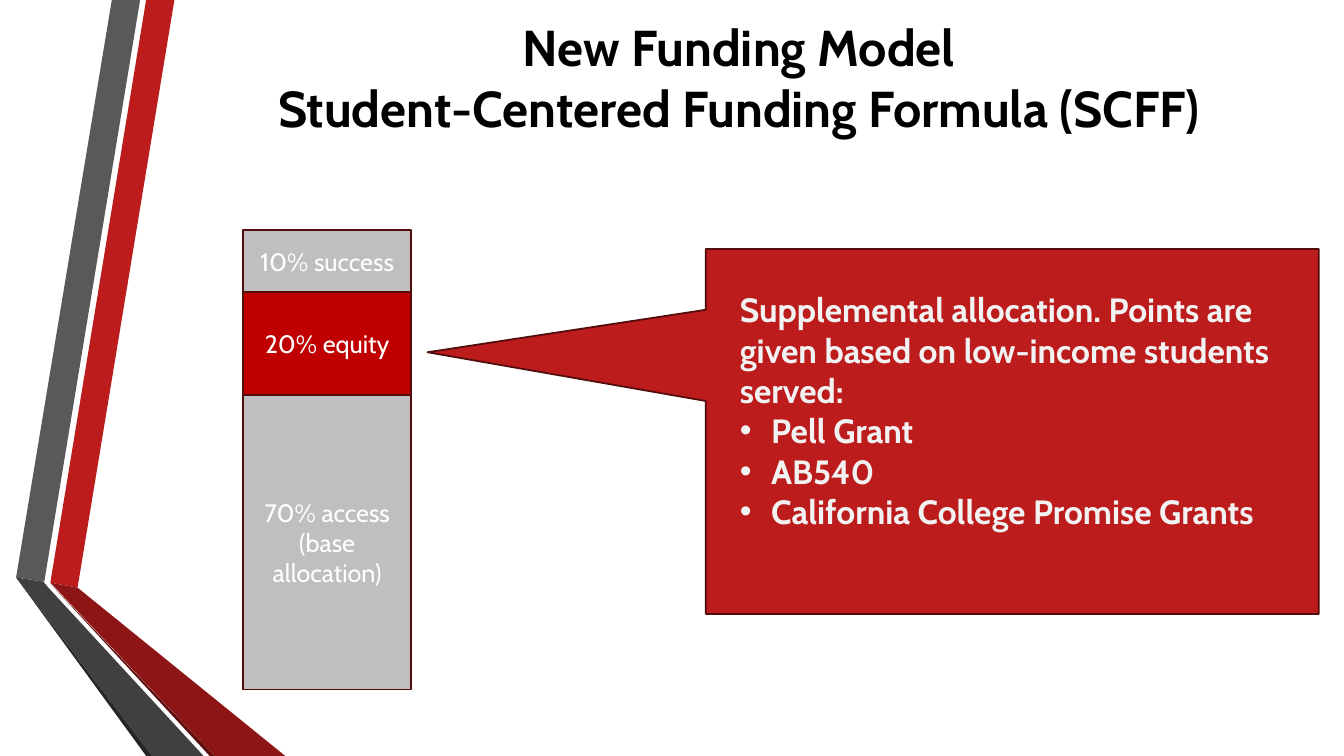
"""Builds the Student-Centered Funding Formula slide."""
import pptx
import pptx.dml.color
import pptx.enum.shapes
import pptx.enum.text
import pptx.oxml
import pptx.oxml.ns
import pptx.util

Inches = pptx.util.Inches
Pt = pptx.util.Pt
SHAPE = pptx.enum.shapes.MSO_SHAPE
ALIGN = pptx.enum.text.PP_ALIGN
ANCHOR = pptx.enum.text.MSO_ANCHOR

FONT = "Cabin"
RED, EDGE, GREY = "BC1C1C", "520C0C", "BFBFBF"

TITLE = ["New Funding Model", "Student-Centered Funding Formula (SCFF)"]
BANDS = [
    ("10% success", 0.62, GREY),
    ("20% equity", 1.02, "C00000"),
    ("70% access (base allocation)", 2.92, GREY),
]
BAND_LEFT, BAND_TOP, BAND_WIDTH = 2.41, 2.28, 1.67
ALLOCATION = "Supplemental allocation. Points are given based on low-income students served:"
GRANTS = ["Pell Grant", "AB540", "California College Promise Grants"]
RIBBONS = [
    (RED, [(0.5, 5.78), (0.77, 5.83), (1.73, 0), (1.45, 0)]),
    ("595959", [(1.39, 0), (1.11, 0), (0.16, 5.73), (0.44, 5.77)]),
    ("262626", [(0.16, 5.73), (1.45, 7.5), (1.51, 7.5)]),
    ("5E0E0E", [(0.5, 5.79), (2.08, 7.5), (2.13, 7.5)]),
    ("8D1515", [(0.5, 5.78), (2.13, 7.5), (2.83, 7.5), (0.77, 5.83)]),
    ("404040", [(2.02, 7.5), (0.48, 5.83), (0.43, 5.77), (0.16, 5.73), (1.51, 7.5)]),
]


def rgb(value):
    return pptx.dml.color.RGBColor.from_string(value)


def paint(sp, fill, line=None):
    sp.shadow.inherit = False
    sp.fill.solid()
    sp.fill.fore_color.rgb = rgb(fill)
    if line:
        sp.line.color.rgb = rgb(line)
        sp.line.width = Pt(1.25)
    else:
        sp.line.fill.background()


def add_box(shapes, kind, left, top, width, height, fill):
    sp = shapes.add_shape(kind, Inches(left), Inches(top), Inches(width), Inches(height))
    paint(sp, fill, EDGE)
    return sp


def add_text(shapes, left, top, width, height):
    sp = shapes.add_textbox(Inches(left), Inches(top), Inches(width), Inches(height))
    sp.text_frame.word_wrap = True
    return sp.text_frame


def add_run(p, text, size, color, bold=False):
    r = p.add_run()
    r.text = text
    r.font.name = FONT
    r.font.size = Pt(size)
    r.font.bold = bold
    r.font.color.rgb = rgb(color)


def add_bullet(p):
    pPr = p._p.get_or_add_pPr()
    pPr.set("marL", str(Inches(0.31)))
    pPr.set("indent", str(Inches(-0.31)))
    ns = pptx.oxml.ns.nsdecls("a")
    pPr.append(pptx.oxml.parse_xml(f'<a:buFont {ns} typeface="Arial"/>'))
    pPr.append(pptx.oxml.parse_xml(f'<a:buChar {ns} char="•"/>'))


def add_ribbons(shapes):
    for color, corners in RIBBONS:
        points = [(Inches(x), Inches(y)) for x, y in corners]
        builder = shapes.build_freeform(*points[0])
        builder.add_line_segments(points[1:], close=True)
        paint(builder.convert_to_shape(), color)


def add_title(shapes):
    tf = add_text(shapes, 2.33, 0.25, 10, 1.02)
    tf.vertical_anchor = ANCHOR.MIDDLE
    p = tf.paragraphs[0]
    p.alignment = ALIGN.CENTER
    for i, line in enumerate(TITLE):
        if i:
            p.add_line_break()
        add_run(p, line, 36, "000000", True)


def add_bands(shapes):
    top = BAND_TOP
    for label, height, color in BANDS:
        sp = add_box(shapes, SHAPE.RECTANGLE, BAND_LEFT, top, BAND_WIDTH, height, color)
        tf = sp.text_frame
        tf.word_wrap = True
        tf.vertical_anchor = ANCHOR.MIDDLE
        p = tf.paragraphs[0]
        p.alignment = ALIGN.CENTER
        add_run(p, label, 18, "FFFFFF")
        top += height


def add_callout(shapes):
    sp = add_box(shapes, SHAPE.RECTANGULAR_CALLOUT, 7, 2.47, 6.08, 3.62, RED)
    sp.adjustments[0] = -0.954
    sp.adjustments[1] = -0.217
    tf = add_text(shapes, 7.24, 2.82, 5.67, 2.73)
    add_run(tf.paragraphs[0], ALLOCATION, 24, "F2F2F2", True)
    for grant in GRANTS:
        p = tf.add_paragraph()
        add_bullet(p)
        add_run(p, grant, 24, "F2F2F2", True)


def main():
    prs = pptx.Presentation()
    prs.slide_width, prs.slide_height = Inches(13.33), Inches(7.5)
    shapes = prs.slides.add_slide(prs.slide_layouts[6]).shapes
    add_ribbons(shapes)
    add_callout(shapes)
    add_title(shapes)
    add_bands(shapes)
    prs.save("out.pptx")


if __name__ == "__main__":
    main()
